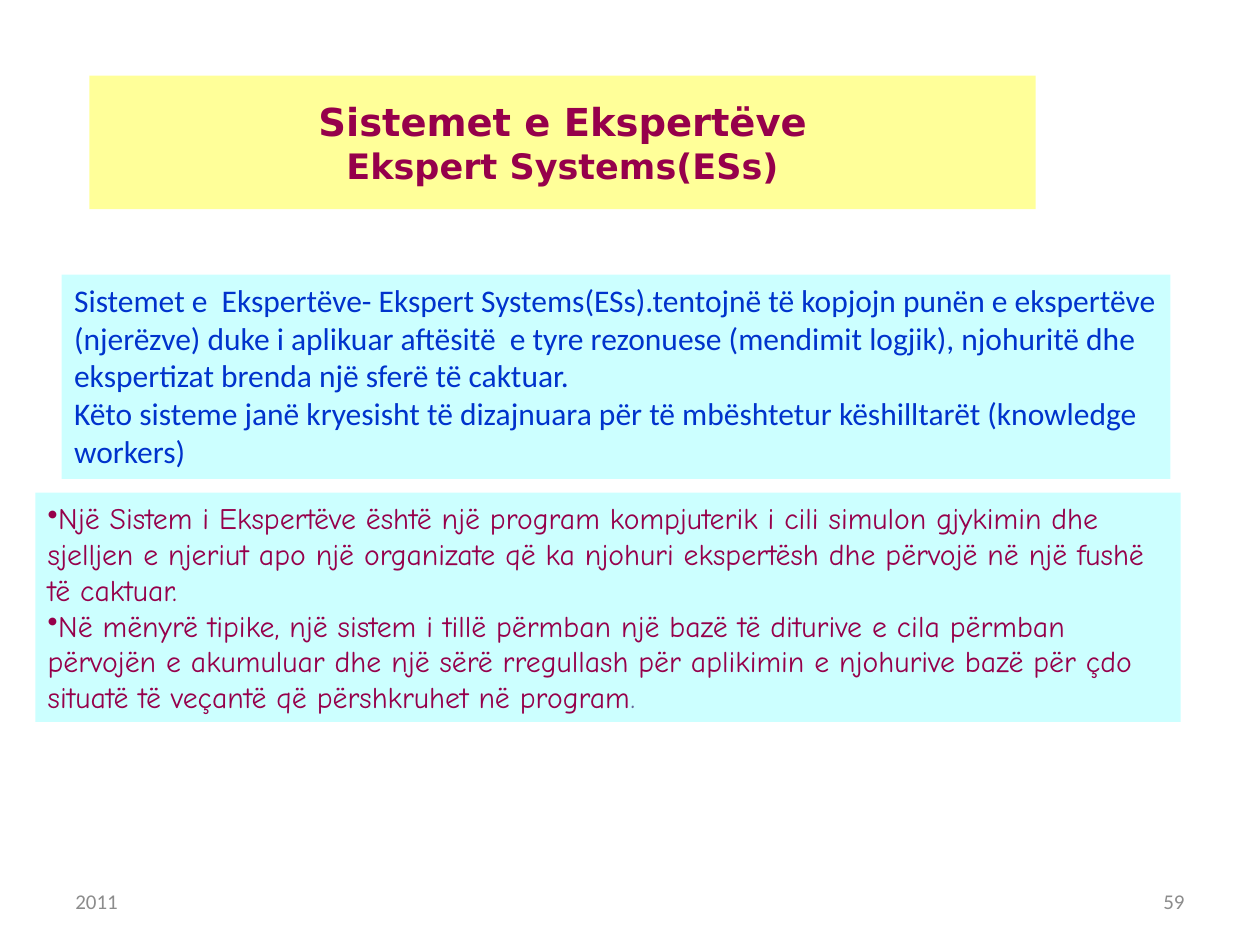
from lxml import etree
from pptx import Presentation
from pptx.dml.color import RGBColor
from pptx.enum.text import MSO_ANCHOR, PP_ALIGN
from pptx.oxml.ns import qn
from pptx.util import Inches, Pt

LEFT, CENTER, RIGHT = PP_ALIGN.LEFT, PP_ALIGN.CENTER, PP_ALIGN.RIGHT
TOP, MIDDLE = MSO_ANCHOR.TOP, MSO_ANCHOR.MIDDLE

COLORS = {
    "yellow": "FFFF99",
    "cyan": "CCFFFF",
    "wine": "96004B",
    "blue": "0033CC",
    "slate": "666699",
    "gray": "8C8C8C",
}

# A paragraph is a list of runs: (text, size, color); "\n" breaks the line.
TITLE = [[
    ("Sistemet e Ekspertëve\n", 22, "wine"),
    ("Ekspert Systems(ESs)", 20, "wine"),
]]
INTRO = [[(
    "Sistemet e  Ekspertëve- Ekspert Systems(ESs).tentojnë të kopjojn punën "
    "e ekspertëve (njerëzve) duke i aplikuar aftësitë  e tyre rezonuese "
    "(mendimit logjik), njohuritë dhe ekspertizat brenda një sferë të "
    "caktuar.\nKëto sisteme janë kryesisht të dizajnuara për të mbështetur "
    "këshilltarët (knowledge workers)", 18, "blue",
)]]
POINTS = [
    [(
        "Një Sistem i Ekspertëve është një program kompjuterik i cili simulon "
        "gjykimin dhe sjelljen e njeriut apo një organizate që ka njohuri "
        "ekspertësh dhe përvojë në një fushë të caktuar.", 17, "wine",
    )],
    [
        (
            "Në mënyrë tipike, një sistem i tillë përmban një bazë të "
            "diturive e cila përmban përvojën e akumuluar dhe një sërë "
            "rregullash për aplikimin e njohurive bazë për çdo situatë të "
            "veçantë që përshkruhet në program", 17, "wine",
        ),
        (".", 17, "slate"),
    ],
]
YEAR = [[("2011", 12, "gray")]]
PAGE = [[("59", 12, "gray")]]

BOXES = [
    (YEAR, (0.5, 6.95, 2.33, 0.4), {}),
    (PAGE, (7.17, 6.95, 2.33, 0.4), {"align": RIGHT}),
    (TITLE, (0.71, 0.6, 7.51, 1.06),
     {"fill": "yellow", "font": "DejaVu Sans", "bold": True, "align": CENTER}),
    (INTRO, (0.49, 2.18, 8.8, 1.62), {"fill": "cyan", "anchor": TOP}),
    (POINTS, (0.28, 3.91, 9.09, 1.82),
     {"fill": "cyan", "font": "Comic Neue", "bullet": "•"}),
]


def rgb(name):
    return RGBColor.from_string(COLORS[name])


def add_text(slide, paras, place, fill=None, font="Calibri", bold=False,
             align=LEFT, anchor=MIDDLE, bullet=None):
    box = slide.shapes.add_textbox(*map(Inches, place))
    if fill:
        box.fill.solid()
        box.fill.fore_color.rgb = rgb(fill)
    frame = box.text_frame
    frame.word_wrap = True
    frame.vertical_anchor = anchor
    for i, runs in enumerate(paras):
        para = frame.add_paragraph() if i else frame.paragraphs[0]
        para.alignment = align
        if bullet:
            props = para._p.get_or_add_pPr()
            props.set("marL", "0")
            props.set("indent", "0")
            etree.SubElement(props, qn("a:buChar"), char=bullet)
        for text, size, color in runs:
            for j, line in enumerate(text.split("\n")):
                if j:
                    para.add_line_break()
                if line:
                    run = para.add_run()
                    run.text = line
                    run.font.name = font
                    run.font.size = Pt(size)
                    run.font.bold = bold
                    run.font.color.rgb = rgb(color)


def main():
    deck = Presentation()
    deck.slide_width, deck.slide_height = Inches(10), Inches(7.5)
    slide = deck.slides.add_slide(deck.slide_layouts[6])
    for paras, place, style in BOXES:
        add_text(slide, paras, place, **style)
    deck.save("out.pptx")


if __name__ == "__main__":
    main()
